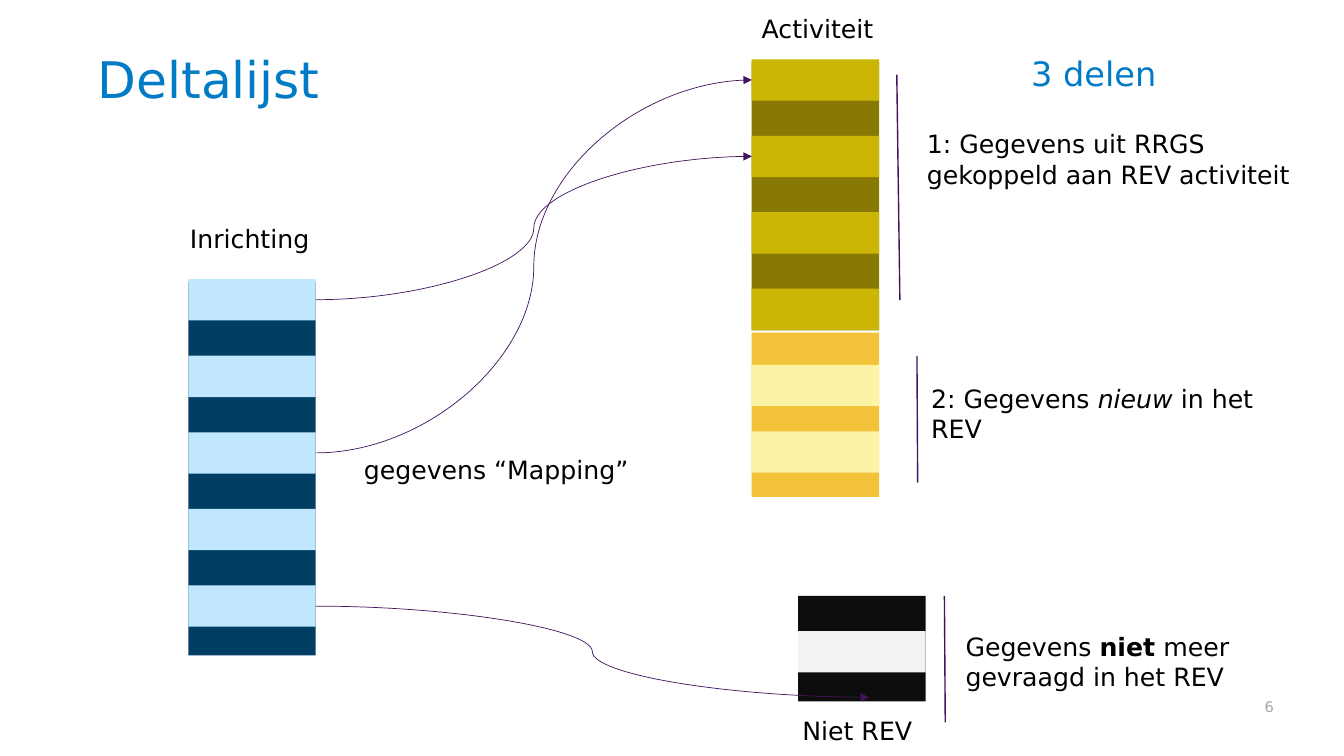
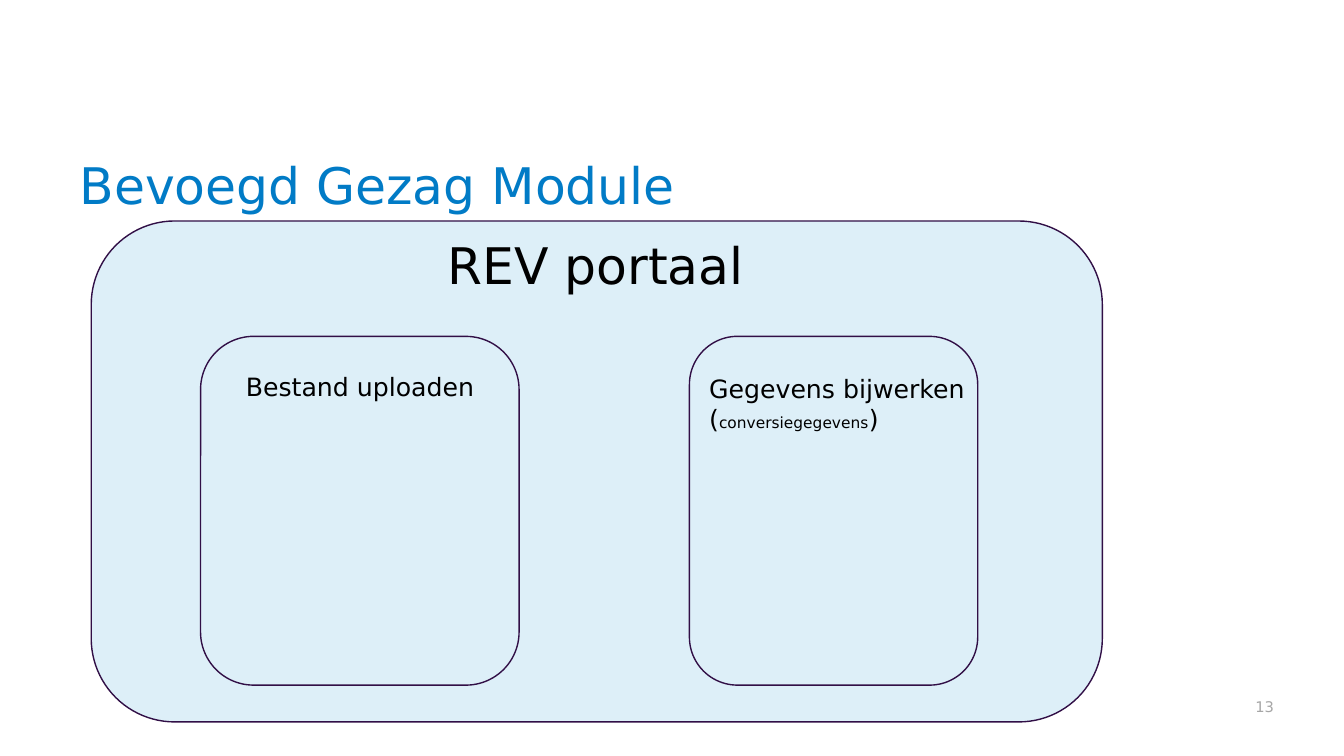
import pptx
import pptx.util
import pptx.dml.color
import pptx.enum.shapes
import pptx.enum.text
import pptx.oxml.ns
import lxml.etree

Pt = pptx.util.Pt
SHAPE = pptx.enum.shapes.MSO_SHAPE
LINK = pptx.enum.shapes.MSO_CONNECTOR
ANCHOR = pptx.enum.text.MSO_ANCHOR
ALIGN = pptx.enum.text.PP_ALIGN

FONT = "DejaVu Sans"
COLORS = {
    "title": "017BC6", "text": "000000", "number": "A6A6A6",
    "link": "42145F", "outline": "310F46", "panel": "DDEFF8",
    "navy": "003E63", "sky": "C1E7FF",
    "olive": "887904", "lime": "CCB605",
    "amber": "F2C239", "cream": "FDF3A5",
    "black": "0D0D0D", "pale": "F2F2F2",
}

STACK_W, STRIPE_H = 91, 29.5
STACKS = {
    "new": dict(x=537, y=237.6, h=117.4, base="amber", stripe="cream",
                first=260.6, count=2, pitch=47.5),
    "facility": dict(x=134.6, y=201.6, h=266.6, base="navy", stripe="sky",
                     first=199.4, count=5, pitch=54.7),
    "activity": dict(x=537, y=44.6, h=191.4, base="olive", stripe="lime",
                     first=42.4, count=4, pitch=54.6),
    "dropped": dict(x=570.2, y=425.6, h=75.4, base="black", stripe="pale",
                    first=450.8, count=1, pitch=0),
}
MAPPINGS = [(0, 1), (2, 0)]
DROPPED_STRIPE, DROPPED_END = 4, (620.6, 498)
BRACKETS = [
    (640.6, 53.4, 642.8, 214.4),
    (655, 254.2, 655.5, 344.8),
    (674.6, 425.6, 675.2, 516),
]

LABELS = [
    ((252.8, 321.3, 207.4, 29), False, ["gegevens “Mapping”"]),
    ((566, 507.6, 94.3, 29), False, ["Niet REV"]),
    ((655, 88.4, 278.6, 51), True,
     ["1: Gegevens uit RRGS gekoppeld aan REV activiteit"]),
    ((658.1, 270.2, 278.6, 51), True,
     [["2: Gegevens ", ("nieuw", {"italic": True}), " in het REV"]]),
    ((682.6, 447.3, 211.7, 51), True,
     [["Gegevens ", ("niet", {"bold": True}), " meer"],
      "gevraagd in het REV"]),
    ((128.6, 156.3, 102.2, 29), False, ["Inrichting"]),
    ((537, 6.2, 95, 29), False, ["Activiteit"]),
]

PANELS = [
    (65.2, 157.9, 722.2, 357.8),
    (143.3, 240.3, 227.5, 249.1),
    (492.5, 240.3, 205.9, 249.1),
]
PANEL_LABELS = [
    ((312.5, 164, 228.2, 51), 36, ["REV portaal"]),
    ((168.5, 262, 177.8, 29), 18, ["Bestand uploaden"]),
    ((499.5, 263, 203.8, 51), 18,
     ["Gegevens bijwerken",
      ["(", ("conversiegegevens", {"size": Pt(11)}), ")"]]),
]


def rgb(name):
    return pptx.dml.color.RGBColor.from_string(COLORS[name])


def add_text(s, box, paragraphs, size=18, color="text", wrap=True,
             anchor=ANCHOR.TOP, align=ALIGN.LEFT, spacing=None):
    tb = s.shapes.add_textbox(*map(Pt, box))
    tf = tb.text_frame
    tf.word_wrap = wrap
    tf.vertical_anchor = anchor
    for i, runs in enumerate(paragraphs):
        p = tf.paragraphs[0] if i == 0 else tf.add_paragraph()
        p.alignment = align
        if spacing:
            p.line_spacing = spacing
        p.font.name, p.font.size = FONT, Pt(size)
        p.font.color.rgb = rgb(color)
        for run in [runs] if isinstance(runs, str) else runs:
            text, style = (run, {}) if isinstance(run, str) else run
            r = p.add_run()
            r.text = text
            for key, value in style.items():
                setattr(r.font, key, value)
    return tf


def add_title(s, box, text, size=36):
    add_text(s, box, [text], size, "title", anchor=ANCHOR.BOTTOM, spacing=0.9)


def add_slide(prs, title, title_box, number):
    s = prs.slides.add_slide(prs.slide_layouts[6])
    add_title(s, title_box, title)
    tf = add_text(s, (516.2, 489.6, 393.8, 25.2), [number], 10.5, "number",
                  anchor=ANCHOR.BOTTOM, align=ALIGN.RIGHT)
    tf.margin_right = 0
    return s


def add_block(s, kind, box, fill, line=None):
    sp = s.shapes.add_shape(kind, *map(Pt, box))
    sp.shadow.inherit = False
    sp.fill.solid()
    sp.fill.fore_color.rgb = rgb(fill)
    if line:
        sp.line.color.rgb = rgb(line)
        sp.line.width = Pt(1)
    else:
        sp.line.fill.background()
    return sp


def add_stack(s, x, y, h, base, stripe, first, count, pitch):
    add_block(s, SHAPE.RECTANGLE, (x, y, STACK_W, h), base)
    return [add_block(s, SHAPE.RECTANGLE,
                      (x, first + i * pitch, STACK_W, STRIPE_H), stripe)
            for i in range(count)]


def add_line(s, kind, ends, width, arrow=False):
    cn = s.shapes.add_connector(kind, *map(Pt, ends))
    cn.line.color.rgb = rgb("link")
    cn.line.width = Pt(width)
    qn = pptx.oxml.ns.qn
    if arrow:
        lxml.etree.SubElement(cn.line._get_or_add_ln(), qn("a:tailEnd"),
                              type="triangle")
    lxml.etree.SubElement(cn._element.spPr, qn("a:effectLst"))
    return cn


def add_curve(s, source, target=None, end=(0, 0)):
    start = ((source.left + source.width) / Pt(1),
             (source.top + source.height / 2) / Pt(1))
    if target is not None:
        end = (target.left / Pt(1), (target.top + target.height / 2) / Pt(1))
    cn = add_line(s, LINK.CURVE, start + end, 0.5, arrow=True)
    cn.begin_connect(source, 3)
    if target is not None:
        cn.end_connect(target, 1)


def build_delta(prs):
    s = add_slide(prs, "Deltalijst", (62.6, 25.2, 222.5, 56.2), "6")
    stripes = {name: add_stack(s, **stack) for name, stack in STACKS.items()}
    facility = stripes["facility"]
    for source, target in MAPPINGS:
        add_curve(s, facility[source], stripes["activity"][target])
    add_curve(s, facility[DROPPED_STRIPE], end=DROPPED_END)
    for box, wrap, paragraphs in LABELS:
        add_text(s, box, paragraphs, wrap=wrap)
    for ends in BRACKETS:
        add_line(s, LINK.STRAIGHT, ends, 1)
    add_title(s, (729.4, 14.4, 129.6, 56.2), "3 delen", 24)


def build_module(prs):
    s = add_slide(prs, "Bevoegd Gezag Module", (49.7, 82.8, 860.4, 74.9), "13")
    for box in PANELS:
        add_block(s, SHAPE.ROUNDED_RECTANGLE, box, "panel", "outline")
    for box, size, paragraphs in PANEL_LABELS:
        add_text(s, box, paragraphs, size, wrap=False)


def main():
    prs = pptx.Presentation()
    prs.slide_width, prs.slide_height = Pt(960), Pt(540)
    build_delta(prs)
    build_module(prs)
    prs.save("out.pptx")


if __name__ == "__main__":
    main()
